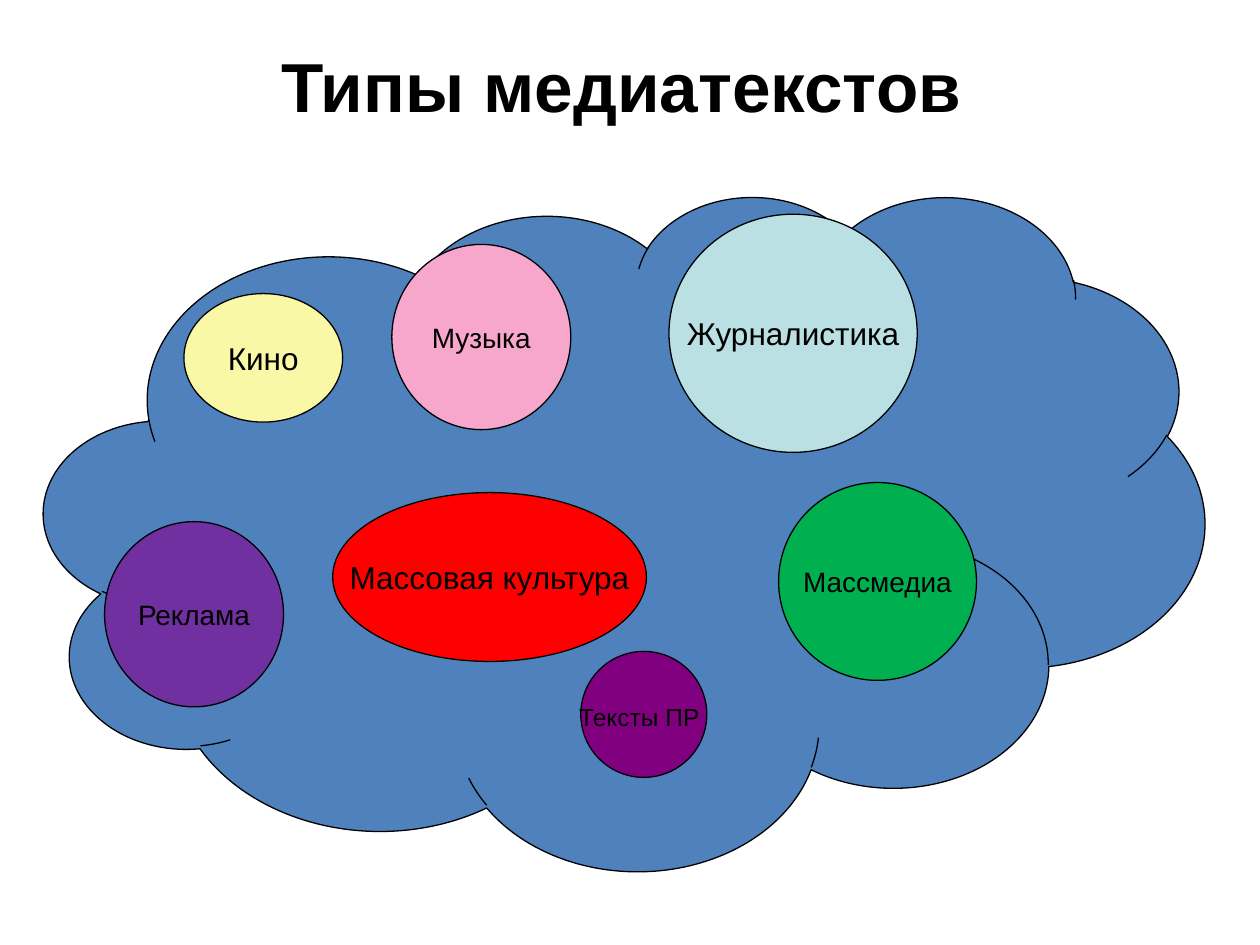
import pptx
import pptx.dml.color
import pptx.enum.shapes
import pptx.enum.text
import pptx.util

SCALE = 9144
SHAPES = pptx.enum.shapes.MSO_SHAPE

MEDIA_TYPES = [
    ("Журналистика", 18, "BBE0E3", (496, 15, 197, 189)),
    ("Реклама", 16, "7030A0", (48, 259, 142, 147)),
    ("Кино", 18, "F8F8A6", (111, 78, 126, 102)),
    ("Тексты ПР", 14, "800080", (426, 362, 100, 100)),
    ("Музыка", 16, "F7A7CB", (276, 39, 142, 147)),
    ("Массовая культура", 18, "FF0000", (229, 236, 249, 134)),
    ("Массмедиа", 16, "00B050", (583, 228, 157, 157)),
]


def px(length):
    return pptx.util.Emu(length * SCALE)


def color(value):
    return pptx.dml.color.RGBColor.from_string(value)


def write_text(shape, text, size=18, bold=False, wrap=False, ink="000000"):
    frame = shape.text_frame
    frame.word_wrap = wrap
    frame.auto_size = pptx.enum.text.MSO_AUTO_SIZE.NONE
    frame.vertical_anchor = pptx.enum.text.MSO_ANCHOR.MIDDLE
    frame.margin_left = frame.margin_right = px(10)
    frame.margin_top = frame.margin_bottom = px(5)
    paragraph = frame.paragraphs[0]
    paragraph.alignment = pptx.enum.text.PP_ALIGN.CENTER
    run = paragraph.add_run()
    run.text = text
    run.font.name = "Arial"
    run.font.size = pptx.util.Pt(size)
    run.font.bold = bold
    run.font.color.rgb = color(ink)


def add_outlined_shape(slide, kind, box, fill):
    shape = slide.shapes.add_shape(kind, *map(px, box))
    shape.shadow.inherit = False
    shape.fill.solid()
    shape.fill.fore_color.rgb = color(fill)
    shape.line.color.rgb = color("000000")
    shape.line.width = pptx.util.Pt(0.75)
    return shape


def add_title(slide, box):
    title = slide.shapes.title
    title.left, title.top, title.width, title.height = map(px, box)
    write_text(title, "Типы медиатекстов", size=39.6, bold=True, wrap=True)


def add_media_cloud(slide, box):
    left, top, _, _ = box
    add_outlined_shape(slide, SHAPES.CLOUD, box, "4F81BD")
    for name, size, fill, (x, y, width, height) in MEDIA_TYPES:
        bubble_box = (left + x, top + y, width, height)
        bubble = add_outlined_shape(slide, SHAPES.OVAL, bubble_box, fill)
        write_text(bubble, name, size=size)
        if name == "Тексты ПР":
            write_text(bubble, " ", size=18)


def main():
    presentation = pptx.Presentation()
    presentation.slide_width = px(1000)
    presentation.slide_height = px(750)
    slide = presentation.slides.add_slide(presentation.slide_layouts[5])
    add_title(slide, (43, 36, 900, 62))
    add_media_cloud(slide, (35, 155, 921, 535))
    presentation.save("out.pptx")


if __name__ == "__main__":
    main()
